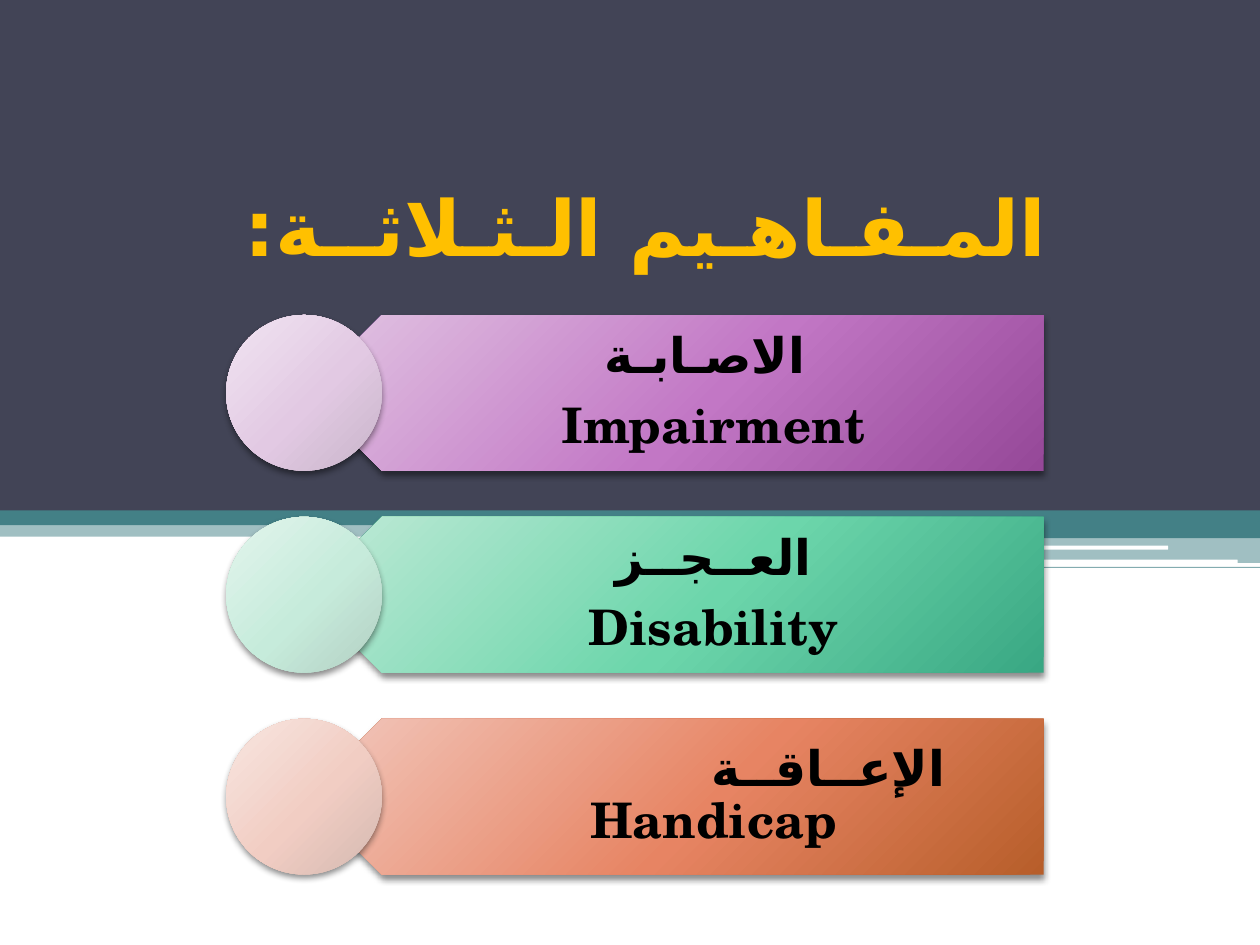
from lxml import etree
from pptx import Presentation
from pptx.dml.color import RGBColor
from pptx.enum.shapes import MSO_SHAPE as Shape
from pptx.enum.text import MSO_ANCHOR as Anchor, PP_ALIGN as Align
from pptx.oxml import parse_xml
from pptx.oxml.ns import qn
from pptx.util import Cm, Pt

PAGE_W, PAGE_H = 25.4, 19.05
COLORS = {"dark": "424456", "teal": "438086", "white": "FFFFFF",
          "gold": "FFC000", "black": "000000"}
SERIF, SCHOOL, ARABIC = "Times New Roman", "TeX Gyre Schola", "DejaVu Sans"
A_NS = "http://schemas.openxmlformats.org/drawingml/2006/main"

# Each concept: lines of (text, format), bar gradient, disc gradient
CONCEPTS = [
    ([(" الاصـابـة", {}), ("Impairment", {})],
     ("E2C6E3", "C277C5", "954898"), ("F1E5F2", "E2C9E3", "C8B5C9")),
    ([("العــجــز", {}), ("Disability", {})],
     ("C2EAD8", "6CD6AB", "39A783"), ("E3F5ED", "C6EBDB", "B3CFC3")),
    ([("الإعــاقــة", {"rtl": False, "indent": 4.62, "after": 0}), ("Handicap", {})],
     ("F2C9BF", "E78463", "B75E2A"), ("F8E6E1", "F1CDC3", "D4B9B1")),
]


def add_plain(page, kind, left, top, width, height):
    shape = page.shapes.add_shape(kind, Cm(left), Cm(top), Cm(width), Cm(height))
    shape.shadow.inherit = False
    shape.line.fill.background()
    return shape


def add_band(page, box, color, alpha=100, kind=Shape.RECTANGLE):
    shape = add_plain(page, kind, *box)
    shape.fill.solid()
    shape.fill.fore_color.rgb = RGBColor.from_string(COLORS[color])
    if alpha < 100:
        tint = shape.fill._xPr.find(".//" + qn("a:srgbClr"))
        etree.SubElement(tint, qn("a:alpha"), val=str(alpha * 1000))


def add_glossy(page, kind, box, stops):
    """Shape with a radial gradient from the upper left and a soft shadow."""
    shape = add_plain(page, kind, *box)
    stop_xml = "".join(
        f'<a:gs pos="{pos * 1000}"><a:srgbClr val="{color}"/></a:gs>'
        for pos, color in zip((0, 55, 100), stops))
    props = shape._element.spPr
    props.find(qn("a:prstGeom")).addnext(parse_xml(
        f'<a:gradFill xmlns:a="{A_NS}" rotWithShape="1"><a:gsLst>{stop_xml}</a:gsLst>'
        '<a:path path="circle"><a:fillToRect l="-40000" t="-90000" r="140000" '
        'b="190000"/></a:path></a:gradFill>'))
    props.find(qn("a:effectLst")).append(parse_xml(
        f'<a:outerShdw xmlns:a="{A_NS}" blurRad="{Pt(4)}" dist="{Pt(2)}" '
        'dir="5400000" rotWithShape="0"><a:srgbClr val="000000">'
        '<a:alpha val="45000"/></a:srgbClr></a:outerShdw>'))
    return shape


def write_line(para, text, size=28, font=SCHOOL, color="black", rtl=True,
               indent=0, after=10, spacing=0.9):
    para.alignment = Align.CENTER
    para.line_spacing = spacing
    para.space_after = Pt(after)
    props = para._p.get_or_add_pPr()
    props.set("rtl", str(int(rtl)))
    if indent:
        props.set("marL", str(Cm(indent)))
    span = para.add_run()
    span.text = text
    span.font.size, span.font.name, span.font.bold = Pt(size), font, True
    span.font.color.rgb = RGBColor.from_string(COLORS[color])
    # Arabic letters use the complex-script typeface
    etree.SubElement(span.font._element, qn("a:cs"), typeface=ARABIC)


def add_text(page, box, lines, insets=(0, 0, 0, 0), **fmt):
    frame = page.shapes.add_textbox(*map(Cm, box)).text_frame
    frame.word_wrap = True
    frame.vertical_anchor = Anchor.MIDDLE
    (frame.margin_left, frame.margin_top,
     frame.margin_right, frame.margin_bottom) = map(Cm, insets)
    for index, (text, line_fmt) in enumerate(lines):
        para = frame.add_paragraph() if index else frame.paragraphs[0]
        write_line(para, text, **{**fmt, **line_fmt})


def add_backdrop(page):
    # Thin stripes on the right
    left, width = 15.04, 10.36
    for top, wide, high, alpha in [
            (10.59, width, 0.26, 100), (10.82, width, 0.53, 50),
            (11.43, width, 0.02, 65), (11.56, 5.46, 0.05, 60),
            (11.66, 5.46, 0.02, 65)]:
        add_band(page, (left, top, wide, high), "teal", alpha)
    for box in [(left, 11, 8.51, 0.08), (20.5, 11.28, 4.45, 0.09)]:
        add_band(page, box, "white", kind=Shape.ROUNDED_RECTANGLE)
    # Full-width bands and dark upper field
    add_band(page, (0, 10.13, PAGE_W, 0.69), "teal", 50)
    add_band(page, (0, 10.21, PAGE_W, 0.38), "teal")
    add_band(page, (17.81, 10.11, 7.59, 0.69), "teal")
    add_band(page, (0, 0, PAGE_W, 10.29), "dark")


def add_concept(page, left, top, width, height, lines, bar_stops, disc_stops):
    # The bar starts at the middle of the disc and points to the left
    bar_left = left + height / 2
    bar = add_glossy(page, Shape.PENTAGON,
                     (bar_left, top, width - height / 2, height), bar_stops)
    bar.rotation = 180
    text_left = left + 0.75 * height
    add_text(page, (text_left, top, left + width - text_left, height), lines,
             insets=(1.37, 0.3, 0.56, 0.3))
    add_glossy(page, Shape.OVAL, (left, top, height, height), disc_stops)


def main():
    deck = Presentation()
    deck.slide_width, deck.slide_height = Cm(PAGE_W), Cm(PAGE_H)
    page = deck.slides.add_slide(deck.slide_layouts[6])
    add_backdrop(page)
    add_text(page, (1.27, 3.6, 23.5, 1.9), [("المـفـاهـيم الـثـلاثــة:", {})],
             size=44.1, font=SERIF, color="gold", after=0, spacing=1.0)
    for row, concept in enumerate(CONCEPTS):
        add_concept(page, 4.56, 6.35 + row * 4.07, 16.48, 3.14, *concept)
    deck.save("out.pptx")


if __name__ == "__main__":
    main()
